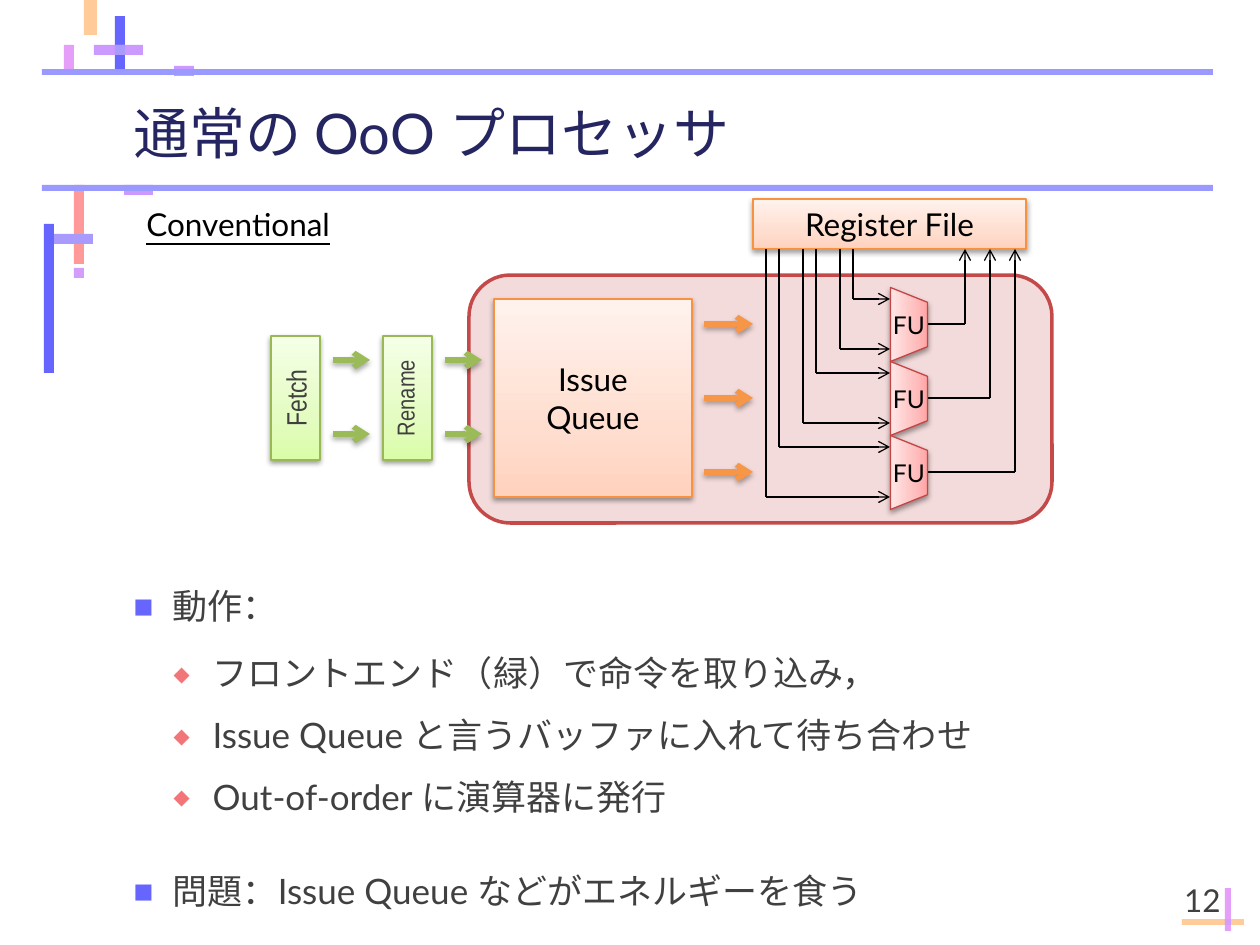
from lxml import etree
from pptx import Presentation
from pptx.dml.color import RGBColor
from pptx.enum.shapes import MSO_CONNECTOR, MSO_SHAPE
from pptx.enum.text import MSO_ANCHOR, MSO_AUTO_SIZE, PP_ALIGN
from pptx.oxml.ns import qn
from pptx.util import Emu, Pt

RECT = MSO_SHAPE.RECTANGLE
ROUND = MSO_SHAPE.ROUNDED_RECTANGLE
TRAP = MSO_SHAPE.FLOWCHART_MANUAL_OPERATION
LINE = MSO_CONNECTOR.STRAIGHT
MID, BASE = MSO_ANCHOR.MIDDLE, MSO_ANCHOR.BOTTOM
LEFT, MEAN, RIGHT = PP_ALIGN.LEFT, PP_ALIGN.CENTER, PP_ALIGN.RIGHT
FIXED = MSO_AUTO_SIZE.NONE

SCALE = 914400 / 126
PITCH = 74
INK, GREY = "000000", "404040"
ORANGE = ("FFD2BD", "FFDED0", "FFF2ED")
GREEN = ("DAFDA7", "E4FCC2", "F5FFE7")
RED = ("FFA6A6", "FFC0C0", "FFE7E7")
DECOR = [
    (1182, 919, 62, 6, "FFCC99"), (1225, 888, 6, 43, "E69FF9"),
    (1225, 919, 6, 6, "D39DFB"), (124, 185, 29, 10, "CC99FF"),
    (74, 185, 10, 79, "FF9999"), (54, 234, 39, 10, "A99BFD"),
    (74, 268, 10, 10, "D39DFB"), (44, 224, 10, 149, "6666FF"),
    (42, 185, 1171, 6, "9999FF"), (115, 16, 10, 59, "6666FF"),
    (174, 66, 20, 10, "CC99FF"), (94, 45, 49, 10, "CC99FF"),
    (115, 45, 10, 10, "A99BFD"), (84, 0, 13, 35, "FFCC99"),
    (64, 45, 10, 30, "E69FF9"), (42, 69, 1171, 6, "9999FF"),
]
POINTS = [
    (0, "動作："),
    (1, "フロントエンド（緑）で命令を取り込み，"),
    (1, "Issue Queue と言うバッファに入れて待ち合わせ"),
    (1, "Out-of-order に演算器に発行"),
    (0, "問題：Issue Queue などがエネルギーを食う"),
]
LEVELS = [(39, 24, 6, "■", "6666FF"), (79, 6, 3, "◆", "F27679")]


def px(n):
    return Emu(round(n * SCALE))


def color(code):
    return RGBColor.from_string(code)


def node(parent, tag, **attrs):
    return etree.SubElement(parent, qn(tag), attrs)


def tint(parent, code):
    return node(parent, "a:srgbClr", val=code)


def shade(item, alpha=None):
    props = item._element.spPr
    for old in props.findall(qn("a:effectLst")):
        props.remove(old)
    effect = node(props, "a:effectLst")
    if alpha:
        drop = node(effect, "a:outerShdw", blurRad="39370", dist="20320",
                    dir="5400000", rotWithShape="0")
        node(tint(drop, INK), "a:alpha", val=str(alpha * 1000))


def blend(item, tones):
    item.fill.gradient()
    grad = item._element.spPr.find(qn("a:gradFill"))
    grad.clear()
    grad.set("rotWithShape", "1")
    stops = node(grad, "a:gsLst")
    for pos, tone in zip((0, 35, 100), tones):
        tint(node(stops, "a:gs", pos=str(pos * 1000)), tone)
    node(grad, "a:lin", ang="16200000", scaled="0")


def place(item, x, y, w, h):
    item.left, item.top, item.width, item.height = map(px, (x, y, w, h))


def style(frame, size, tone, align, font="Lato"):
    for para in frame.paragraphs:
        para.alignment = align
        for run in para.runs:
            run.font.name = font
            run.font.size = Pt(size)
            run.font.color.rgb = color(tone)


def block(slide, box, fill, kind=RECT, edge=None, width=0.75):
    item = slide.shapes.add_shape(kind, *map(px, box))
    item.shadow.inherit = False
    if edge:
        item.line.color.rgb = color(edge)
        item.line.width = Pt(width)
    else:
        item.line.fill.background()
    if isinstance(fill, str):
        item.fill.solid()
        item.fill.fore_color.rgb = color(fill)
    else:
        blend(item, fill)
        shade(item, 38)
    return item


def label(item, text, size, tone=INK, font="Lato", align=MEAN, turn=None):
    frame = item.text_frame
    frame.text = text
    frame.word_wrap = False
    frame.vertical_anchor = MID
    if turn:
        frame._txBody.bodyPr.set("vert", turn)
    style(frame, size, tone, align, font)
    return frame


def wire(slide, start, end, tone=INK, width=0.75, arrow=False, alpha=None):
    item = slide.shapes.add_connector(LINE, *map(px, start + end))
    item.line.color.rgb = color(tone)
    item.line.width = Pt(width)
    if arrow:
        node(item.line._get_or_add_ln(), "a:tailEnd", type="arrow")
    shade(item, alpha)


def flow(slide, x, y, length, count, tone):
    for i in range(count):
        row = y + i * PITCH
        wire(slide, (x, row), (x + length, row), tone, 3, True, 35)


def unit(slide, x, y, top, step):
    for gap, rise in ((37, -25), (50, 25)):
        turn = x - gap - 37 * step
        wire(slide, (turn, top), (turn, y + rise))
        wire(slide, (turn, y + rise), (x, y + rise), arrow=True)
    out = x + 75 + 25 * step
    wire(slide, (x + 37, y), (out, y))
    wire(slide, (out, y), (out, top), arrow=True)
    item = block(slide, (x - 18, y - 18, 74, 37), RED, TRAP, "C34545")
    item.rotation = 270
    label(item, "FU", 14, turn="vert")


def front(slide, x, y):
    for i, (text, size) in enumerate((("Fetch", 16), ("Rename", 14))):
        left = x + 112 * i
        item = block(slide, (left, y, 49, 124), GREEN, edge="98B955")
        frame = label(item, text, size, GREY, "Arial Narrow", turn="vert270")
        if i:
            frame.paragraphs[0].line_spacing = 0.8
        flow(slide, left + 62, y + 24, 37, 2, "9BBB59")


def back(slide, x, y):
    block(slide, (x, y, 583, 248), "F3DBDB", ROUND, "C44A4A", 2)
    store = block(slide, (x + 284, y - 76, 273, 50), ORANGE, edge="F69240")
    label(store, "Register File", 18)
    queue = block(slide, (x + 25, y + 24, 198, 198), ORANGE, edge="F69240")
    label(queue, "Issue\nQueue", 18)
    flow(slide, x + 235, y + 49, 49, 3, "F79646")
    for i in range(3):
        unit(slide, x + 421, y + 49 + i * PITCH, y - 26, i)


def title(slide, box):
    item = slide.shapes.title
    place(item, *box)
    frame = item.text_frame
    frame.text = "通常の OoO プロセッサ"
    frame.auto_size = FIXED
    frame.vertical_anchor = MID
    frame.margin_top = frame.margin_bottom = 0
    style(frame, 32, "252561", LEFT)


def body(slide, box):
    item = slide.placeholders[1]
    place(item, *box)
    frame = item.text_frame
    frame.text = "\n".join(text for _, text in POINTS)
    frame.auto_size = FIXED
    frame.vertical_anchor = MID
    style(frame, 20, GREY, LEFT)
    for para, (level, _) in zip(frame.paragraphs, POINTS):
        indent, before, after, mark, tone = LEVELS[level]
        para.level = level
        para.line_spacing = 1.1
        para.space_before, para.space_after = Pt(before), Pt(after)
        props = para._p.get_or_add_pPr()
        props.set("marL", str(px(indent)))
        props.set("indent", str(px(-39)))
        tint(node(props, "a:buClr"), tone)
        node(props, "a:buSzPct", val="60000")
        node(props, "a:buFont", typeface="Lato")
        node(props, "a:buChar", char=mark)


def number(slide, box):
    item = slide.shapes.add_textbox(*map(px, box))
    frame = item.text_frame
    frame.text = "12"
    frame.word_wrap = True
    frame.vertical_anchor = BASE
    style(frame, 18, GREY, RIGHT)


def main():
    deck = Presentation()
    deck.slide_width, deck.slide_height = px(1260), px(945)
    slide = deck.slides.add_slide(deck.slide_layouts[1])
    for *box, tone in DECOR:
        block(slide, box, tone)
    title(slide, (121, 76, 1079, 112))
    body(slide, (121, 572, 1091, 348))
    number(slide, (1133, 876, 100, 49))
    back(slide, 469, 275)
    front(slide, 271, 336)
    name = block(slide, (134, 199, 198, 49), "FFFFFF")
    frame = label(name, "Conventional", 18, align=LEFT)
    frame.paragraphs[0].runs[0].font.underline = True
    deck.save("out.pptx")


if __name__ == "__main__":
    main()
